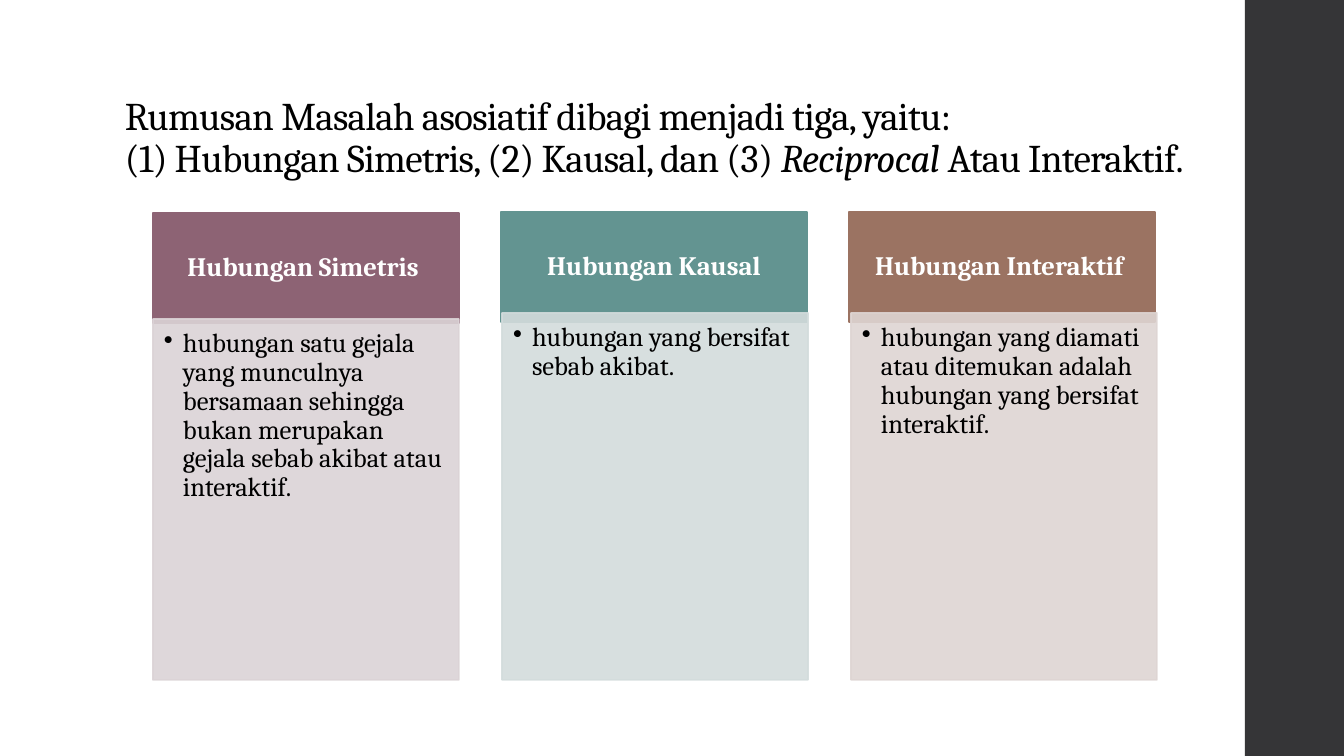
"""Build a slide on the three kinds of associative research problems."""
from lxml import etree
from pptx import Presentation
from pptx.dml.color import RGBColor
from pptx.enum.shapes import MSO_SHAPE as Shape
from pptx.enum.text import MSO_ANCHOR as Anchor, PP_ALIGN as Align
from pptx.oxml.ns import qn
from pptx.util import Pt

TITLE_LINES = [
    [("Rumusan Masalah asosiatif dibagi menjadi tiga, yaitu:", False)],
    [("(1) Hubungan Simetris, (2) Kausal, dan (3) ", False),
     ("Reciprocal", True), (" Atau Interaktif.", False)],
]
BLACK = RGBColor(0x00, 0x00, 0x00)
WHITE = RGBColor(0xFF, 0xFF, 0xFF)
CHARCOAL = RGBColor(0x35, 0x35, 0x37)
PLUM, PALE_PLUM = RGBColor(0x8D, 0x63, 0x74), RGBColor(0xDB, 0xD3, 0xD6)
TEAL, PALE_TEAL = RGBColor(0x63, 0x94, 0x91), RGBColor(0xD3, 0xDC, 0xDC)
BROWN, PALE_BROWN = RGBColor(0x9B, 0x73, 0x62), RGBColor(0xDE, 0xD5, 0xD3)

COLUMNS = [
    ("Hubungan Simetris ",
     "hubungan satu gejala yang munculnya bersamaan sehingga bukan merupakan "
     "gejala sebab akibat atau interaktif.",
     PLUM, PALE_PLUM, 213, 319),
    ("Hubungan Kausal", "hubungan yang bersifat sebab akibat.",
     TEAL, PALE_TEAL, 212, 313),
    ("Hubungan Interaktif ",
     "hubungan yang diamati atau ditemukan adalah hubungan yang bersifat interaktif.",
     BROWN, PALE_BROWN, 212, 313),
]

FONT = "Cambria"
WIDTH, HEIGHT = 1344, 756
BAR_LEFT = 1245
COLUMN_LEFT, COLUMN_WIDTH = 153, 306
HEADER_STEP, BODY_STEP = 348, 349
HEADER_HEIGHT, BODY_BOTTOM = 110, 680
BULLET_INDENT = 19
HEADER_INSETS = (15, 8, 15, 8)
BODY_INSETS = (11, 11, 15, 17)


def px(length):
    """Turn pixels into EMU."""
    return round(length * 914400 / 100.8)


def add_box(slide, left, top, width, height, color):
    """Add a plain rectangle outlined in its own colour."""
    box = slide.shapes.add_shape(Shape.RECTANGLE, *map(px, (left, top, width, height)))
    box.shadow.inherit = False
    box.fill.solid()
    box.fill.fore_color.rgb = color
    box.line.color.rgb = color
    box.line.width = Pt(1.1)
    return box


def set_frame(shape, insets, anchor):
    """Set wrapping, insets and anchor, and return the first paragraph."""
    frame = shape.text_frame
    frame.word_wrap = True
    frame.vertical_anchor = anchor
    (frame.margin_left, frame.margin_top,
     frame.margin_right, frame.margin_bottom) = map(px, insets)
    return frame.paragraphs[0]


def style(paragraph, size, color, align, bold=False):
    """Set the font, alignment and line spacing of a paragraph."""
    paragraph.alignment = align
    paragraph.line_spacing = 0.9
    font = paragraph.font
    font.name, font.size, font.bold = FONT, Pt(size), bold
    font.color.rgb = color


def make_translucent(shape):
    """Give the fill and outline 90% opacity."""
    for color in shape._element.spPr.iter(qn("a:srgbClr")):
        etree.SubElement(color, qn("a:alpha"), val="90000")


def add_bullet(paragraph):
    """Give a paragraph a hanging round bullet."""
    properties = paragraph._p.get_or_add_pPr()
    properties.set("marL", str(px(BULLET_INDENT)))
    properties.set("indent", str(-px(BULLET_INDENT)))
    bullet = etree.Element(qn("a:buChar"), char="•")
    properties.find(qn("a:defRPr")).addprevious(bullet)


def add_title(slide):
    """Add the two-line title."""
    box = slide.shapes.add_textbox(*map(px, (115, 40, 1093, 146)))
    paragraph = set_frame(box, (10, 5, 10, 5), Anchor.BOTTOM)
    style(paragraph, 28, BLACK, Align.LEFT)
    for index, line in enumerate(TITLE_LINES):
        if index:
            paragraph.add_line_break()
        for text, italic in line:
            run = paragraph.add_run()
            run.text = text
            run.font.italic = italic
            run._r.get_or_add_rPr().set("spc", "-50")


def add_column(slide, index, heading, description, dark, pale, header_top, body_top):
    """Add one heading box and the description box below it."""
    header = add_box(slide, COLUMN_LEFT + index * HEADER_STEP, header_top,
                     COLUMN_WIDTH, HEADER_HEIGHT, dark)
    paragraph = set_frame(header, HEADER_INSETS, Anchor.MIDDLE)
    paragraph.text = heading
    style(paragraph, 19, WHITE, Align.CENTER, bold=True)

    body = add_box(slide, COLUMN_LEFT + index * BODY_STEP, body_top,
                   COLUMN_WIDTH, BODY_BOTTOM - body_top, pale)
    make_translucent(body)
    paragraph = set_frame(body, BODY_INSETS, Anchor.TOP)
    paragraph.text = description
    style(paragraph, 19, BLACK, Align.LEFT)
    add_bullet(paragraph)


def main():
    """Build and save the slide."""
    presentation = Presentation()
    presentation.slide_width, presentation.slide_height = px(WIDTH), px(HEIGHT)
    slide = presentation.slides.add_slide(presentation.slide_layouts[6])
    side_bar = add_box(slide, BAR_LEFT, 0, WIDTH - BAR_LEFT, HEIGHT, CHARCOAL)
    side_bar.line.fill.background()
    add_title(slide)
    for index, column in enumerate(COLUMNS):
        add_column(slide, index, *column)
    presentation.save("out.pptx")


if __name__ == "__main__":
    main()
